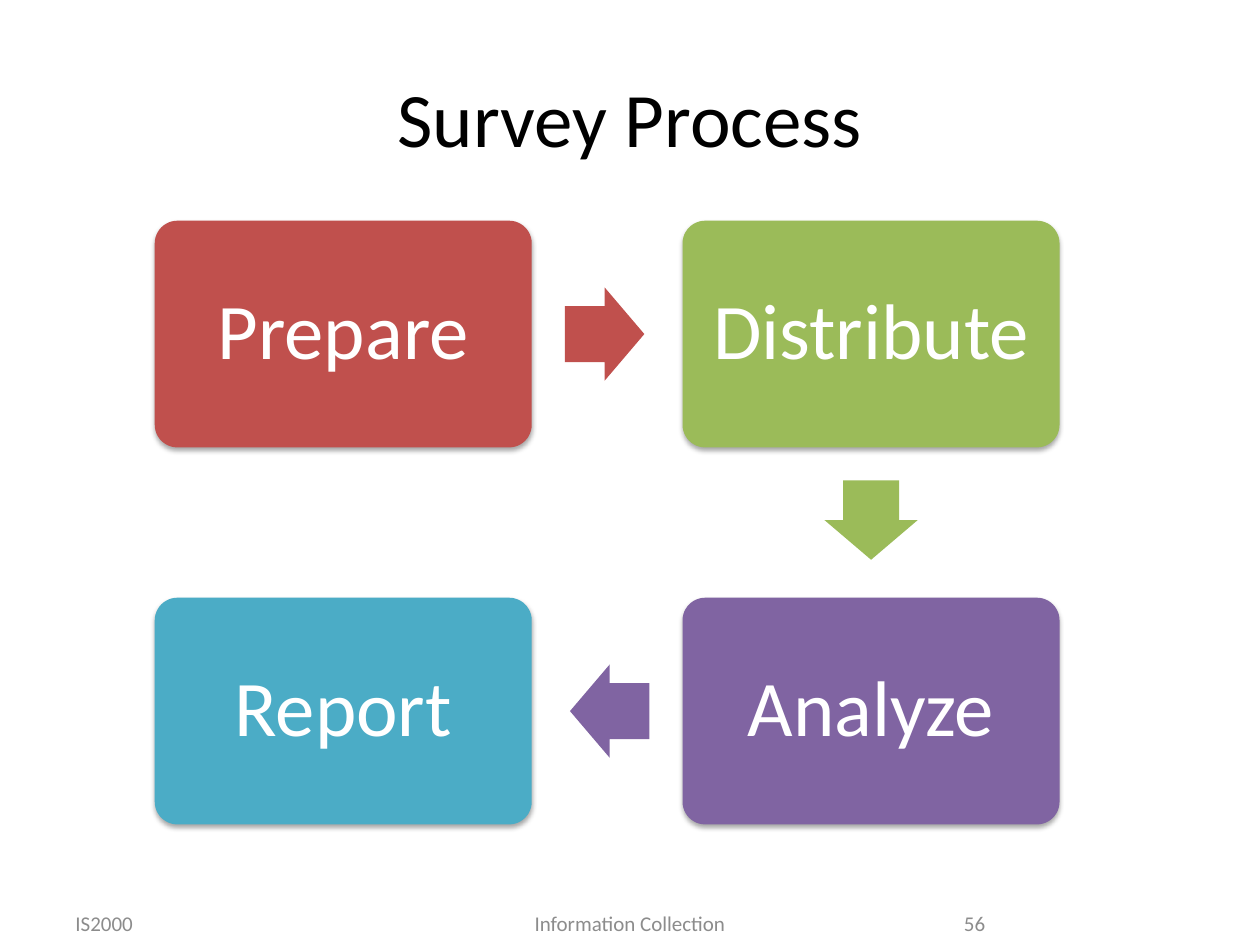
from lxml.etree import SubElement
from pptx import Presentation
from pptx.dml.color import RGBColor
from pptx.enum.shapes import MSO_SHAPE
from pptx.enum.text import MSO_ANCHOR, PP_ALIGN
from pptx.oxml.ns import qn
from pptx.util import Cm, Pt

BOX_W, BOX_H = 7.6, 4.57
ARROW_W, ARROW_H = 1.6, 1.88
ARROW_NUDGE = 0.05
STEPS = [
    ("Prepare", "C0504D", 0, 0),
    ("Distribute", "9BBB59", 1, 0),
    ("Analyze", "8064A2", 1, 1),
    ("Report", "4BACC6", 0, 1),
]
ROTATIONS = {(1, 0): 0, (0, 1): 90, (-1, 0): 180}
FOOTERS = [
    ("IS2000", 0, 5.92, PP_ALIGN.LEFT),
    ("Information Collection", 6.53, 9.8, PP_ALIGN.CENTER),
    ("56", 16.94, 1.9, PP_ALIGN.RIGHT),
]


def color(value):
    """Turn a hex string into a colour."""
    return RGBColor.from_string(value)


def write(holder, words, size, ink, align):
    """Put one formatted, vertically centred paragraph into a shape."""
    frame = holder.text_frame
    frame.word_wrap = True
    frame.vertical_anchor = MSO_ANCHOR.MIDDLE
    frame.text = words
    paragraph = frame.paragraphs[0]
    paragraph.alignment = align
    for key, value in {"name": "Calibri", "size": Pt(size)}.items():
        setattr(paragraph.font, key, value)
    paragraph.font.color.rgb = color(ink)


def place(holder, left, top, width, height):
    """Move a shape to a box given in centimetres."""
    box = {"left": left, "top": top, "width": width, "height": height}
    for key, value in box.items():
        setattr(holder, key, Cm(value))


def add_filled(slide, kind, box, fill, adjustments):
    """Add a flat preset shape without an outline."""
    shape = slide.shapes.add_shape(kind, *map(Cm, box))
    shape.shadow.inherit = False
    shape.fill.solid()
    shape.fill.fore_color.rgb = color(fill)
    shape.line.fill.background()
    for index, value in enumerate(adjustments):
        shape.adjustments[index] = value
    return shape


def add_soft_shadow(shape):
    """Give a shape a soft shadow straight below it."""
    effects = shape._element.spPr.find(qn("a:effectLst"))
    shadow = SubElement(effects, qn("a:outerShdw"), blurRad=str(Pt(3.1)),
                        dist=str(Pt(1.8)), dir="5400000", rotWithShape="0")
    black = SubElement(shadow, qn("a:srgbClr"), val="000000")
    SubElement(black, qn("a:alpha"), val="35000")


def add_title(slide, words, box):
    """Fill the title placeholder."""
    place(slide.shapes.title, *box)
    write(slide.shapes.title, words, 44, "000000", PP_ALIGN.CENTER)


def add_process(slide, left, top, width, height):
    """Draw the steps in the corners of the box, with arrows between them."""
    pitch_x, pitch_y = width - BOX_W, height - BOX_H
    for index, (step, fill, column, row) in enumerate(STEPS):
        x, y = left + column * pitch_x, top + row * pitch_y
        card = add_filled(slide, MSO_SHAPE.ROUNDED_RECTANGLE,
                          (x, y, BOX_W, BOX_H), fill, [0.1])
        add_soft_shadow(card)
        write(card, step, 45, "FFFFFF", PP_ALIGN.CENTER)
        card.text_frame.paragraphs[0].line_spacing = 0.9
        if index + 1 < len(STEPS):
            next_column, next_row = STEPS[index + 1][2:]
            dx, dy = next_column - column, next_row - row
            center_x = x + BOX_W / 2 + dx * (pitch_x / 2 - ARROW_NUDGE)
            center_y = y + BOX_H / 2 + dy * (pitch_y / 2 - ARROW_NUDGE)
            arrow = add_filled(
                slide, MSO_SHAPE.RIGHT_ARROW,
                (center_x - ARROW_W / 2, center_y - ARROW_H / 2, ARROW_W, ARROW_H),
                fill, [0.6, 0.5])
            arrow.rotation = ROTATIONS[dx, dy]


def add_footer(slide, left, top, height):
    """Write the course, topic and page number along the bottom."""
    for words, offset, width, align in FOOTERS:
        box = map(Cm, (left + offset, top, width, height))
        write(slide.shapes.add_textbox(*box), words, 12, "8C8C8C", align)


def main():
    """Build and save the slide."""
    deck = Presentation()
    deck.slide_width, deck.slide_height = Cm(25.4), Cm(19.05)
    slide = deck.slides.add_slide(deck.slide_layouts[5])
    add_title(slide, "Survey Process", (1.27, 0.76, 22.86, 3.18))
    add_process(slide, 3.12, 4.45, 18.24, 12.17)
    add_footer(slide, 1.27, 18.21, 0.8)
    deck.save("out.pptx")


if __name__ == "__main__":
    main()
